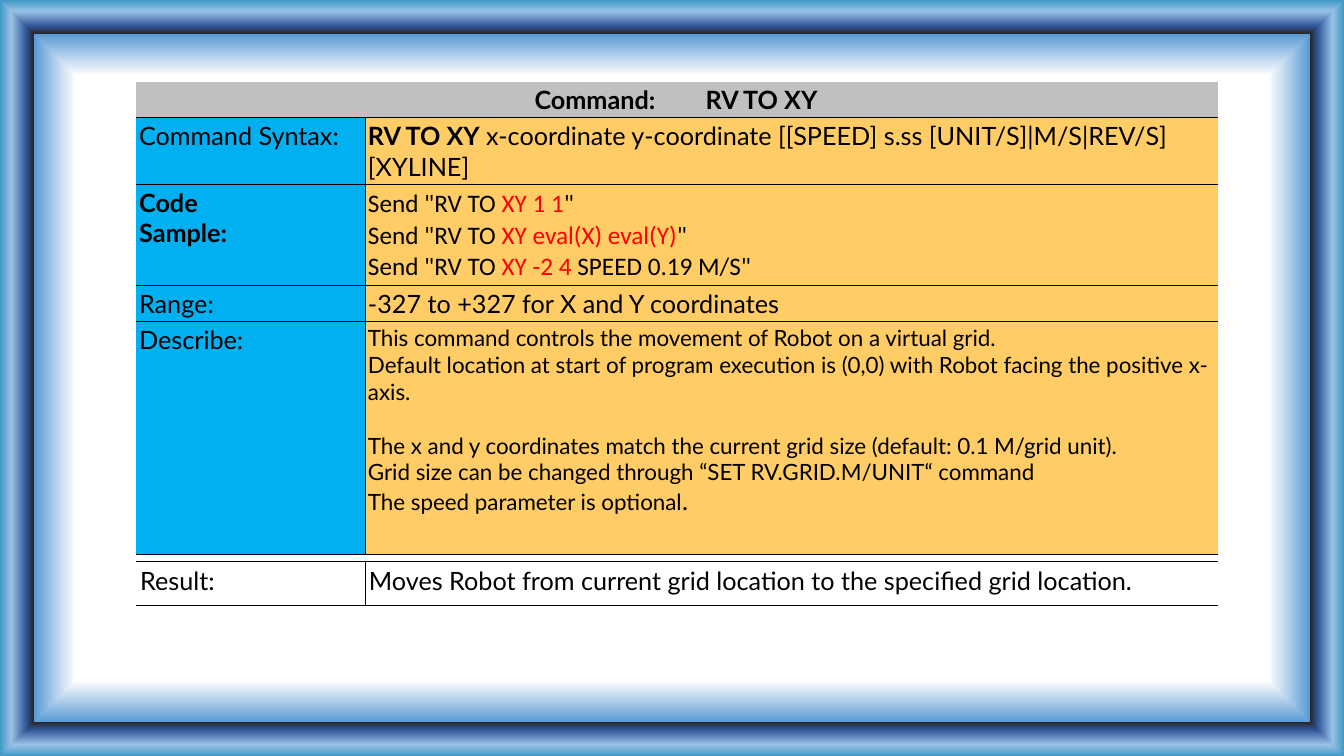
import pptx
import pptx.util
import pptx.dml.color
import pptx.enum.text
import pptx.oxml
import pptx.oxml.ns
from lxml import etree

BOLD = {"bold": True}
RED = {"color": "accent"}
CODE = {"font": "code"}
SMALL = {"size": "small"}

# A cell is a list of paragraphs; a paragraph is a list of (text, format) runs.
HEADING = [[("Command:", BOLD), (" ", {"bold": True, "spacing": 31.5}), ("RV TO XY", BOLD)]]


def code_line(argument, ending):
    return [('Send "RV TO ', CODE), (argument, {**CODE, **RED}), (ending, CODE)]


COMMAND_ROWS = [
    ([[("Command Syntax:", {})]],
     [[("RV TO XY", BOLD),
       (" x-coordinate y-coordinate [[SPEED] s.ss [UNIT/S]|M/S|REV/S] [XYLINE]", {})]]),
    ([[("Code \nSample:", BOLD)]],
     [code_line("XY 1 1", '"'),
      code_line("XY eval(X) eval(Y)", '"'),
      code_line("XY -2 4 ", 'SPEED 0.19 M/S"')]),
    ([[("Range:", {})]],
     [[("-327 to +327 for X and Y coordinates", {})]]),
    ([[("Describe:", {})]],
     [[("This command controls the movement of Robot on a virtual grid.", SMALL)],
      [("Default location at start of program execution is (0,0) with Robot facing "
        "the positive x-axis.", SMALL)],
      [("The x and y coordinates match the current grid size (default: 0.1 M/grid unit).",
        SMALL)],
      [("Grid size can be changed through “SET RV.GRID.M/UNIT“ command", SMALL)],
      [("The speed parameter is optional", SMALL), (".", {})]]),
]
RESULT_ROW = ([[("Result:", {})]],
              [[("Moves Robot from current grid location to the specified grid location.", {})]])

THEME = {
    "fonts": {"main": "Lato", "code": "Calibri"},
    "sizes": {"main": 18, "small": 16},
    "colors": {"text": "000000", "accent": "FF0000", "heading": "C0C0C0",
               "label": "00B0F0", "detail": "FFCC66"},
    "frame": [(80, "FFFFFF"), (91, "5B9BD5"), (91, "262626"),
              (93, "2F5597"), (97, "99C1E5"), (100, "419AC7")],
}
SLIDE = (13.33, 7.5)
LEFT, WIDTH, LABEL_WIDTH = 1.35, 10.73, 2.27
COMMAND_TOP, COMMAND_HEIGHTS = 0.81, [0.36, 0.65, 1.0, 0.36, 2.31]
RESULT_TOP, RESULT_HEIGHTS = 5.57, [0.43]
PARAGRAPH_GAP = 19.2
NO_STYLE = "{2D5ABB26-0587-4C30-8999-92F81FD0307C}"
ALIGN = pptx.enum.text.PP_ALIGN


def rgb(name):
    return pptx.dml.color.RGBColor.from_string(THEME["colors"][name])


def add_text(p, text, font="main", size="main", color="text", bold=False, spacing=None):
    for i, part in enumerate(text.split("\n")):
        if i:
            p.add_line_break()
        r = p.add_run()
        r.text = part
        r.font.name = THEME["fonts"][font]
        r.font.size = pptx.util.Pt(THEME["sizes"][size])
        r.font.bold = bold
        r.font.color.rgb = rgb(color)
        if spacing:
            r.font._element.set("spc", str(round(spacing * 100)))


def add_borders(cell, sides, width):
    tc_pr = cell._tc.get_or_add_tcPr()
    for side in "LRTB":
        ln = etree.SubElement(tc_pr, pptx.oxml.ns.qn("a:ln" + side))
        if side in sides:
            ln.set("w", str(pptx.util.Pt(width)))
            fill = etree.SubElement(ln, pptx.oxml.ns.qn("a:solidFill"))
            etree.SubElement(fill, pptx.oxml.ns.qn("a:srgbClr"), val=THEME["colors"]["text"])
        else:
            etree.SubElement(ln, pptx.oxml.ns.qn("a:noFill"))


def fill_cell(cell, paragraphs, fill, sides, border, inset):
    add_borders(cell, sides, border)
    if fill:
        cell.fill.solid()
        cell.fill.fore_color.rgb = rgb(fill)
    else:
        cell.fill.background()
    cell.margin_left = cell.margin_top = cell.margin_bottom = pptx.util.Inches(inset)
    cell.margin_right = pptx.util.Inches(inset + 0.02)
    tf = cell.text_frame
    for i, runs in enumerate(paragraphs):
        p = tf.add_paragraph() if i else tf.paragraphs[0]
        for text, style in runs:
            add_text(p, text, **style)
        if runs[0][1] == CODE:
            p.line_spacing = 1.03


def add_grid(slide, top, heights):
    inches = pptx.util.Inches
    table = slide.shapes.add_table(len(heights), 2, inches(LEFT), inches(top),
                                   inches(WIDTH), inches(sum(heights))).table
    table.first_row = table.horz_banding = False
    table._tbl.tblPr.find(pptx.oxml.ns.qn("a:tableStyleId")).text = NO_STYLE
    for column, width in zip(table.columns, (LABEL_WIDTH, WIDTH - LABEL_WIDTH)):
        column.width = inches(width)
    for row, height in zip(table.rows, heights):
        row.height = inches(height)
    return table


def fill_row(table, row, contents, fills, border, inset):
    for column, sides in enumerate(("RTB", "LTB")):
        fill_cell(table.cell(row, column), contents[column], fills[column],
                  sides, border, inset)


def add_frame_background(slide):
    stops = "".join(f'<a:gs pos="{pos * 1000}"><a:srgbClr val="{color}"/></a:gs>'
                    for pos, color in THEME["frame"])
    gradient = pptx.oxml.parse_xml(
        f'<a:gradFill {pptx.oxml.ns.nsdecls("a")} rotWithShape="1"><a:gsLst>{stops}</a:gsLst>'
        '<a:path path="rect"><a:fillToRect l="50000" t="50000" r="50000" b="50000"/></a:path>'
        '</a:gradFill>')
    slide.background.fill.solid()
    solid = slide._element.find(".//" + pptx.oxml.ns.qn("p:bgPr"))[0]
    solid.getparent().replace(solid, gradient)


def main():
    prs = pptx.Presentation()
    prs.slide_width, prs.slide_height = map(pptx.util.Inches, SLIDE)
    slide = prs.slides.add_slide(prs.slide_layouts[6])
    add_frame_background(slide)

    command = add_grid(slide, COMMAND_TOP, COMMAND_HEIGHTS)
    heading = command.cell(0, 0)
    heading.merge(command.cell(0, 1))
    fill_cell(heading, HEADING, "heading", "B", 0.75, 0.03)
    heading.text_frame.paragraphs[0].alignment = ALIGN.CENTER
    for row, contents in enumerate(COMMAND_ROWS, start=1):
        fill_row(command, row, contents, ("label", "detail"), 0.75, 0.03)
    grid_note = command.cell(len(COMMAND_ROWS), 1).text_frame.paragraphs[2]
    grid_note.space_before = pptx.util.Pt(PARAGRAPH_GAP)

    result = add_grid(slide, RESULT_TOP, RESULT_HEIGHTS)
    fill_row(result, 0, RESULT_ROW, (None, None), 0.38, 0.04)
    prs.save("out.pptx")


if __name__ == "__main__":
    main()
